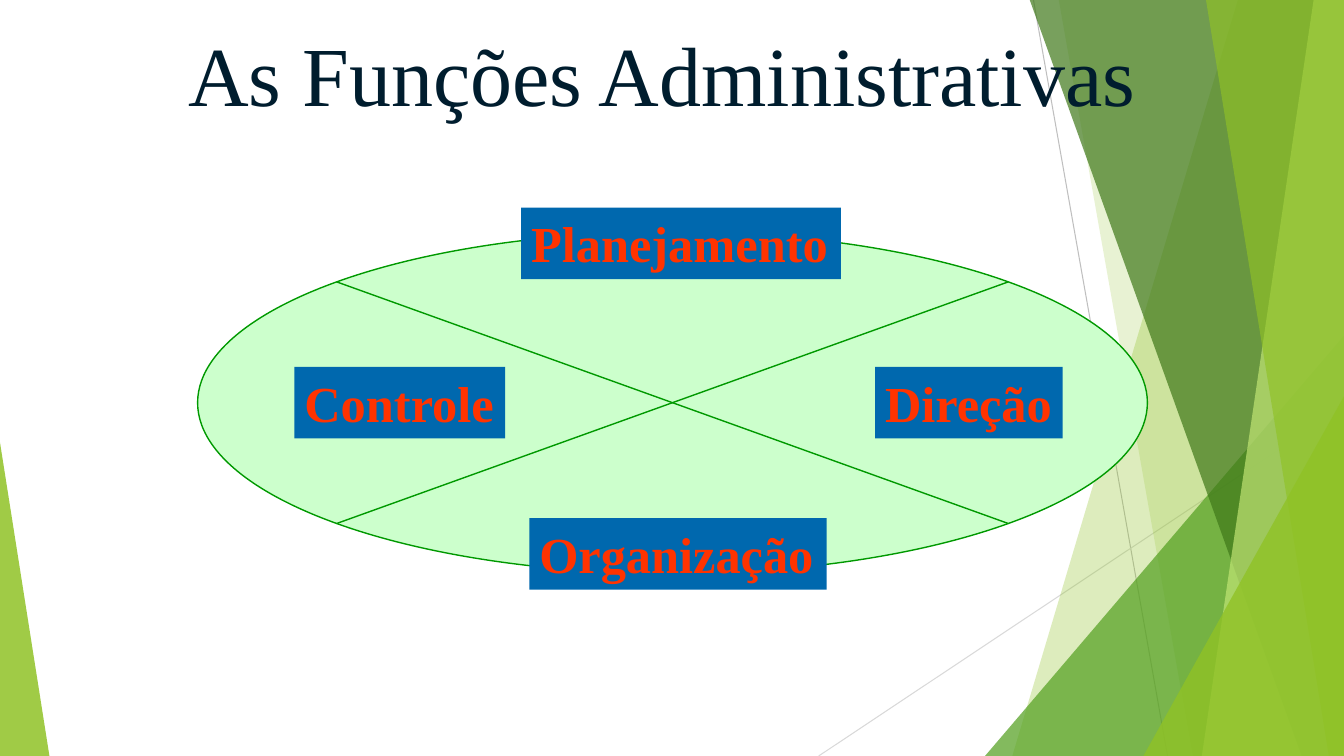
from lxml.etree import SubElement
from pptx import Presentation
from pptx.dml.color import RGBColor
from pptx.enum.shapes import MSO_CONNECTOR as Link, MSO_SHAPE as Shape
from pptx.enum.text import MSO_ANCHOR as Anchor, MSO_AUTO_SIZE as Fit, PP_ALIGN as Align
from pptx.oxml.ns import qn
from pptx.util import Inches, Pt

WIDE, HIGH, TOP = 13.33, 7.5, -0.01
FONT = "Times New Roman"
HUES = {
    "lime": "90C226", "green": "54A021", "dark": "3F7819", "pale": "C0E474",
    "gray": "BFBFBF", "light": "D9D9D9", "title": "001D2E", "mint": "CCFFCC",
    "edge": "009900", "blue": "0068AE", "red": "FF3300",
}
BANDS = [
    (12.28, 10.04, "lime", 30),
    (10.5, 11.83, "lime", 20),
    (10.21, 12.91, "dark", 70),
    (13.03, 11.92, "pale", 70),
    (11.96, 13.18, "lime", 65),
]
LABELS = [
    ("Planejamento", 5.17, 2.06, 3.17),
    ("Controle", 2.92, 3.64, 2.09),
    ("Organização", 5.25, 5.14, 2.95),
    ("Direção", 8.68, 3.64, 1.86),
]


def hue(name):
    return RGBColor.from_string(HUES[name])


def paint(shape, name, alpha=100):
    shape.shadow.inherit = False
    shape.line.fill.background()
    shape.fill.solid()
    shape.fill.fore_color.rgb = hue(name)
    if alpha < 100:
        tint = shape.fill._xPr.find(".//" + qn("a:srgbClr"))
        SubElement(tint, qn("a:alpha")).set("val", str(alpha * 1000))


def add_line(shapes, start, end, name):
    line = shapes.add_connector(Link.STRAIGHT, *map(Inches, start + end))
    line.line.color.rgb = hue(name)
    line.line.width = Pt(0.75)
    SubElement(line._element.spPr, qn("a:effectLst"))


def add_band(shapes, upper, lower, name, alpha):
    path = shapes.build_freeform(Inches(upper), Inches(TOP))
    rest = [(WIDE, TOP), (WIDE, HIGH), (lower, HIGH)]
    path.add_line_segments([(Inches(x), Inches(y)) for x, y in rest])
    paint(path.convert_to_shape(), name, alpha)


def add_wedge(shapes, left, top, width, peak, name, alpha):
    box = map(Inches, (left, top, width, HIGH - top))
    wedge = shapes.add_shape(Shape.ISOSCELES_TRIANGLE, *box)
    wedge.adjustments[0] = peak
    paint(wedge, name, alpha)


def write(shape, text, size, name, align, bold=False):
    frame = shape.text_frame
    frame.text = text
    frame.vertical_anchor = Anchor.TOP
    para = frame.paragraphs[0]
    para.alignment = align
    font = para.runs[0].font
    font.name, font.size, font.bold = FONT, Pt(size), bold
    font.color.rgb = hue(name)
    return frame


def add_label(shapes, text, left, top, width):
    label = shapes.add_shape(Shape.RECTANGLE, *map(Inches, (left, top, width, 0.71)))
    paint(label, "blue")
    frame = write(label, text, 36, "red", Align.LEFT, True)
    frame.word_wrap = False
    frame.auto_size = Fit.SHAPE_TO_FIT_TEXT


def add_title(shapes, text):
    title = shapes.title
    title.left, title.top, title.width, title.height = map(Inches, (1.67, 0.17, 10, 1.11))
    write(title, text, 60, "title", Align.CENTER).auto_size = Fit.NONE
    shapes._spTree.append(title._element)


def add_wheel(shapes):
    box = map(Inches, (1.96, 2.3, 9.42, 3.39))
    wheel = shapes.add_shape(Shape.FLOWCHART_SUMMING_JUNCTION, *box)
    paint(wheel, "mint")
    wheel.line.color.rgb = hue("edge")
    wheel.line.width = Pt(1)


def add_decor(shapes):
    add_line(shapes, (10.25, 0), (11.58, HIGH), "gray")
    add_line(shapes, (WIDE, 4.03), (8.12, HIGH), "light")
    for band in BANDS[:2]:
        add_band(shapes, *band)
    add_wedge(shapes, 9.77, 3.33, 3.56, 1, "green", 72)
    for band in BANDS[2:]:
        add_band(shapes, *band)
    add_wedge(shapes, 11.34, 3.93, 1.99, 1, "lime", 80)
    add_wedge(shapes, 0, 4.39, 0.49, 0, "lime", 85)


def main():
    deck = Presentation()
    deck.slide_width, deck.slide_height = Inches(WIDE), Inches(HIGH)
    shapes = deck.slides.add_slide(deck.slide_layouts[5]).shapes
    add_decor(shapes)
    add_title(shapes, "As Funções Administrativas ")
    add_wheel(shapes)
    for label in LABELS:
        add_label(shapes, *label)
    deck.save("out.pptx")


if __name__ == "__main__":
    main()
